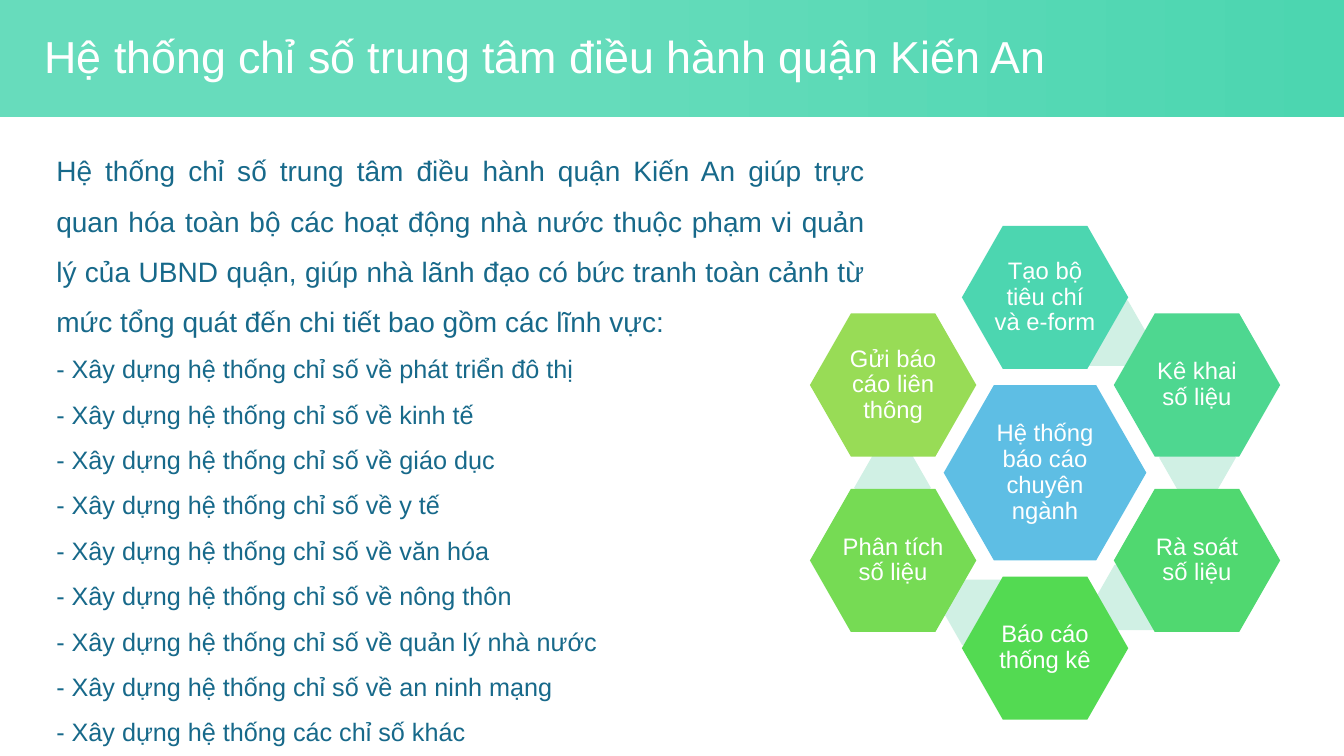
from dataclasses import dataclass
from math import cos, radians, sin

from pptx import Presentation
from pptx import util as u
from pptx.dml.color import RGBColor
from pptx.enum import shapes, text


@dataclass(frozen=True)
class Theme:
    font: str = "Arial"
    header_start: str = "67DCBC"
    header_end: str = "4CD6B0"
    white: str = "FFFFFF"
    body: str = "17698A"
    hub: str = "5EBEE4"
    bridge: str = "D0F0E4"
    title_size: int = 32
    intro_size: int = 20
    item_size: int = 18
    label_size: int = 17


theme = Theme()


def add_run(paragraph, words, size, color):
    run = paragraph.add_run()
    run.text = words
    run.font.name = theme.font
    run.font.size = u.Pt(size)
    run.font.color.rgb = RGBColor.from_string(color)


def add_hexagon(slide, center_x, center_y, width, height, color, label=""):
    shape = slide.shapes.add_shape(
        shapes.MSO_SHAPE.HEXAGON,
        u.Inches(center_x - width / 2), u.Inches(center_y - height / 2),
        u.Inches(width), u.Inches(height))
    shape.adjustments[0] = 0.286
    shape.shadow.inherit = False
    shape.fill.solid()
    shape.fill.fore_color.rgb = RGBColor.from_string(color)
    shape.line.fill.background()
    if label:
        frame = shape.text_frame
        frame.word_wrap = True
        frame.vertical_anchor = text.MSO_ANCHOR.MIDDLE
        frame.margin_left = frame.margin_right = u.Inches(0.02)
        frame.margin_top = frame.margin_bottom = u.Inches(0.02)
        paragraph = frame.paragraphs[0]
        paragraph.alignment = text.PP_ALIGN.CENTER
        paragraph.line_spacing = 0.9
        add_run(paragraph, label, theme.label_size, theme.white)


presentation = Presentation()
presentation.slide_width = u.Inches(13.33)
presentation.slide_height = u.Inches(7.5)
slide = presentation.slides.add_slide(presentation.slide_layouts.get_by_name("Title Only"))

# Title
title = slide.shapes.title
title.left, title.top = u.Inches(0.34), u.Inches(0.19)
title.width, title.height = u.Inches(12.66), u.Inches(0.79)
title.text_frame.auto_size = text.MSO_AUTO_SIZE.NONE
title.text_frame.vertical_anchor = text.MSO_ANCHOR.MIDDLE
paragraph = title.text_frame.paragraphs[0]
paragraph.alignment = text.PP_ALIGN.LEFT
paragraph.line_spacing = 0.9
add_run(paragraph, "Hệ thống chỉ số trung tâm điều hành quận Kiến An",
        theme.title_size, theme.white)

# Header band, placed behind the title
header = slide.shapes.add_shape(
    shapes.MSO_SHAPE.RECTANGLE, 0, 0, presentation.slide_width, u.Inches(1.16))
header.shadow.inherit = False
header.line.fill.background()
header.fill.gradient()
header.fill.gradient_angle = 0
stops = ((0.38, theme.header_start), (1, theme.header_end))
for stop, (position, color) in zip(header.fill.gradient_stops, stops):
    stop.position = position
    stop.color.rgb = RGBColor.from_string(color)
title.element.addprevious(header.element)

# Introduction and list of fields
intro = ("Hệ thống chỉ số trung tâm điều hành quận Kiến An giúp trực quan hóa toàn bộ "
         "các hoạt động nhà nước thuộc phạm vi quản lý của UBND quận, giúp nhà lãnh đạo "
         "có bức tranh toàn cảnh từ mức tổng quát đến chi tiết bao gồm các lĩnh vực:")
fields = ["về phát triển đô thị", "về kinh tế", "về giáo dục", "về y tế", "về văn hóa",
          "về nông thôn", "về quản lý nhà nước", "về an ninh mạng"]
lines = [(intro, theme.intro_size)]
lines += [(f"- Xây dựng hệ thống chỉ số {field}", theme.item_size) for field in fields]
lines.append(("- Xây dựng hệ thống các chỉ số khác", theme.item_size))

body = slide.shapes.add_textbox(u.Inches(0.46), u.Inches(1.31), u.Inches(8.22), u.Inches(6.15))
frame = body.text_frame
frame.word_wrap = True
frame.auto_size = text.MSO_AUTO_SIZE.SHAPE_TO_FIT_TEXT
for index, (words, size) in enumerate(lines):
    paragraph = frame.add_paragraph() if index else frame.paragraphs[0]
    paragraph.alignment = text.PP_ALIGN.JUSTIFY
    paragraph.line_spacing = 1.5
    add_run(paragraph, words, size, theme.body)

# Reporting cycle: hub, then steps clockwise from the top with bridges between
hub_x, hub_y = 10.365, 4.69
step_radius, bridge_radius, bridge_lead = 1.74, 1.52, 24.4
steps = [("Tạo bộ tiêu chí và e-form", "4CD6B0"), ("Kê khai số liệu", "4ED790"),
         ("Rà soát số liệu", "50D870"), ("Báo cáo thống kê", "53DA52"),
         ("Phân tích số liệu", "76DB54"), ("Gửi báo cáo liên thông", "98DC56")]
add_hexagon(slide, hub_x, hub_y, 2.01, 1.74, theme.hub, "Hệ thống báo cáo chuyên ngành")
for index, (label, color) in enumerate(steps):
    angle = index * 360 / len(steps)
    if index < len(steps) - 1:
        turn = radians(angle + bridge_lead)
        add_hexagon(slide, hub_x + bridge_radius * sin(turn), hub_y - bridge_radius * cos(turn),
                    0.76, 0.65, theme.bridge)
    turn = radians(angle)
    add_hexagon(slide, hub_x + step_radius * sin(turn), hub_y - step_radius * cos(turn),
                1.65, 1.42, color, label)

presentation.save("out.pptx")
